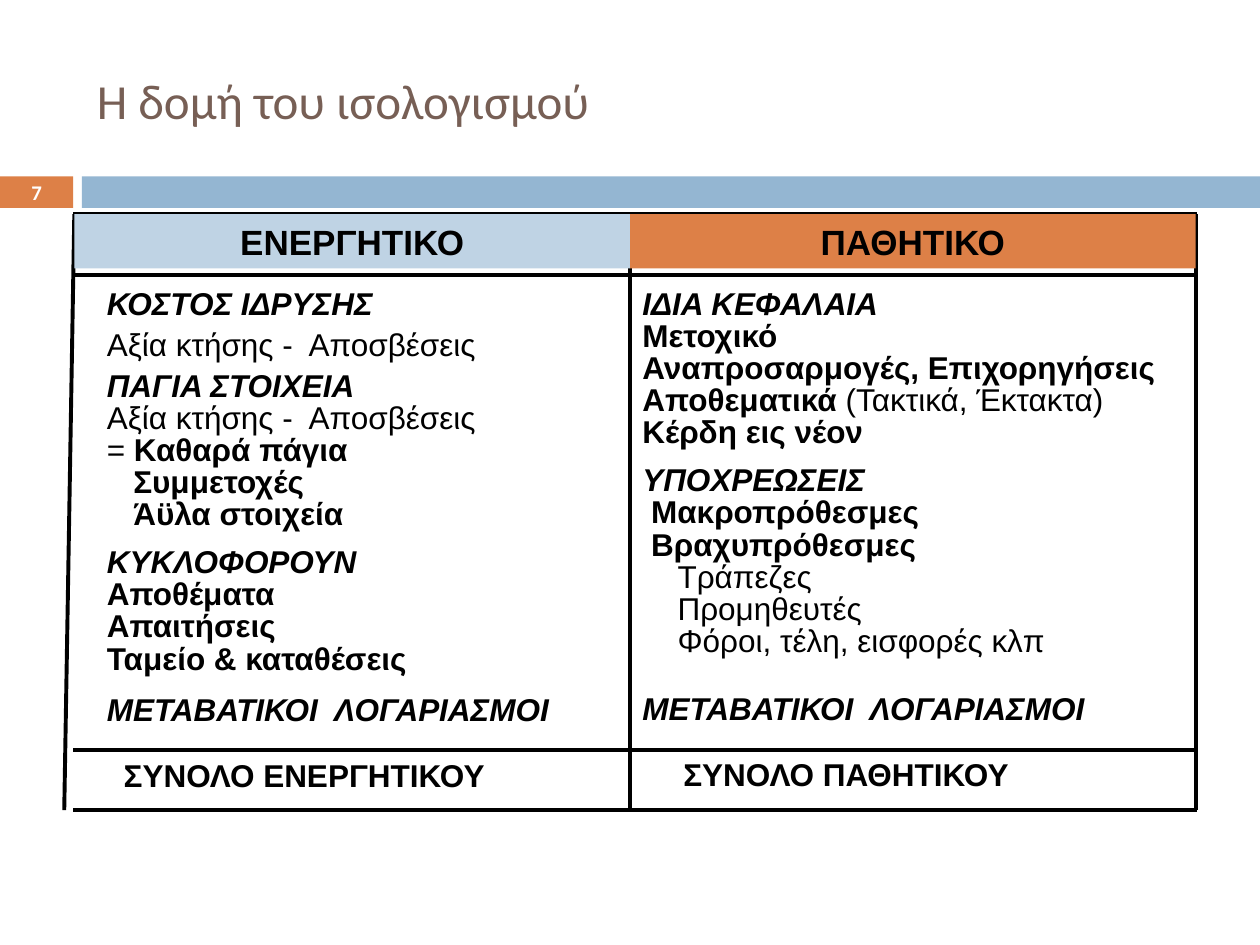
from lxml import etree
from pptx import Presentation
from pptx.dml.color import RGBColor
from pptx.enum import shapes, text
from pptx.oxml.ns import qn
from pptx.util import Inches, Pt

BLACK = RGBColor(0x00, 0x00, 0x00)
WHITE = RGBColor(0xFF, 0xFF, 0xFF)
BROWN = RGBColor(0x77, 0x5F, 0x55)
ORANGE = RGBColor(0xDD, 0x80, 0x47)
BLUE = RGBColor(0x94, 0xB6, 0xD2)
PALE_BLUE = RGBColor(0xBF, 0xD3, 0xE4)

# Ledger rows: (space before in pt, indent in inches, runs of (text, style));
# style letters: b = bold, i = italic
ASSETS = [
    (0, 0, [("ΚΟΣΤΟΣ ΙΔΡΥΣΗΣ", "bi")]),
    (5, 0, [("Αξία κτήσης -  Αποσβέσεις", "")]),
    (5, 0, [("ΠΑΓΙΑ ΣΤΟΙΧΕΙΑ", "bi")]),
    (0, 0, [("Αξία κτήσης -  Αποσβέσεις", "")]),
    (0, 0, [("= ", ""), ("Καθαρά πάγια", "b")]),
    (0, 0.21, [("Συμμετοχές", "b")]),
    (0, 0.21, [("Άϋλα στοιχεία", "b")]),
    (9, 0, [("ΚΥΚΛΟΦΟΡΟΥΝ", "bi")]),
    (0, 0, [("Αποθέματα", "b")]),
    (0, 0, [("Απαιτήσεις", "b")]),
    (0, 0, [("Ταμείο & καταθέσεις", "b")]),
    (10.8, 0, [("ΜΕΤΑΒΑΤΙΚΟΙ  ΛΟΓΑΡΙΑΣΜΟΙ", "bi")]),
]
LIABILITIES = [
    (0, 0, [("ΙΔΙΑ ΚΕΦΑΛΑΙΑ", "bi")]),
    (0, 0, [("Μετοχικό", "b")]),
    (0, 0, [("Αναπροσαρμογές, Επιχορηγήσεις", "b")]),
    (0, 0, [("Αποθεματικά ", "b"), ("(Τακτικά, Έκτακτα)", "")]),
    (0, 0, [("Κέρδη εις νέον", "b")]),
    (9, 0, [("ΥΠΟΧΡΕΩΣΕΙΣ", "bi")]),
    (0, 0.07, [("Μακροπρόθεσμες", "b")]),
    (0, 0.07, [("Βραχυπρόθεσμες", "b")]),
    (0, 0.28, [("Τράπεζες", "")]),
    (0, 0.28, [("Προμηθευτές", "")]),
    (0, 0.28, [("Φόροι, τέλη, εισφορές κλπ", "")]),
    (20.6, 0, [("ΜΕΤΑΒΑΤΙΚΟΙ  ΛΟΓΑΡΙΑΣΜΟΙ", "bi")]),
]


def style_font(font, size, color=BLACK, bold=False, italic=False, name="Arial"):
    font.name, font.size = name, Pt(size)
    font.bold, font.italic = bold, italic
    font.color.rgb = color


def add_box(slide, box, fill=None):
    """A filled rectangle, or a plain text box when there is no fill."""
    place = [Inches(v) for v in box]
    if fill is None:
        shape = slide.shapes.add_textbox(*place)
    else:
        shape = slide.shapes.add_shape(shapes.MSO_SHAPE.RECTANGLE, *place)
        shape.shadow.inherit = False
        shape.fill.solid()
        shape.fill.fore_color.rgb = fill
        shape.line.fill.background()
    shape.text_frame.word_wrap = True
    return shape


def add_label(slide, box, words, size, fill=None, color=BLACK, bold=True,
              name="Arial", align=text.PP_ALIGN.CENTER,
              anchor=text.MSO_ANCHOR.MIDDLE):
    frame = add_box(slide, box, fill).text_frame
    frame.vertical_anchor = anchor
    line = frame.paragraphs[0]
    line.text = words
    line.alignment = align
    style_font(line.runs[0].font, size, color, bold, name=name)


def add_rule(slide, x1, y1, x2, y2):
    rule = slide.shapes.add_connector(
        shapes.MSO_CONNECTOR.STRAIGHT, *[Inches(v) for v in (x1, y1, x2, y2)])
    rule.line.color.rgb = BLACK
    rule.line.width = Pt(2.25)
    etree.SubElement(rule._element.spPr, qn("a:effectLst"))


def add_ledger(slide, box, rows):
    frame = add_box(slide, box).text_frame
    for index, (space, indent, runs) in enumerate(rows):
        line = frame.add_paragraph() if index else frame.paragraphs[0]
        line.line_spacing = 0.85
        line.space_before = Pt(space)
        if indent:
            line._p.get_or_add_pPr().set("marL", str(Inches(indent)))
        for words, style in runs:
            run = line.add_run()
            run.text = words
            style_font(run.font, 18, bold="b" in style, italic="i" in style)


def add_header(slide, left, top, width, height):
    """Title above a band that starts with the slide number."""
    band_h, badge_w, band_left = 0.25, 0.58, 0.65
    band_top = top + height - band_h
    add_label(slide, (left + 0.67, top + 0.25, 8.92, 1.08),
              "Η δομή του ισολογισμού", 28, color=BROWN, bold=False,
              name="Calibri", align=text.PP_ALIGN.LEFT)
    add_label(slide, (left, band_top, badge_w, band_h), "7", 11.9, ORANGE,
              WHITE, name="Calibri")
    add_box(slide, (left + band_left, band_top, width - band_left, band_h), BLUE)


def add_balance_sheet(slide, left, top, width, height):
    """Two-sided account: headings, entries and totals between rules."""
    right, bottom, middle = left + width, top + height, 5
    total_top, side_right, head_h = bottom - 0.48, right - 0.01, 0.43

    # Rules of the account
    for y in (top, top + 0.48, total_top, bottom):
        add_rule(slide, left, y, right, y)
    add_rule(slide, left + 0.01, top, left - 0.07, bottom)
    add_rule(slide, middle, top + 0.4, middle, bottom)
    add_rule(slide, side_right, top, side_right, bottom)

    # Headings
    add_label(slide, (left + 0.01, top, middle - left - 0.01, head_h),
              "ΕΝΕΡΓΗΤΙΚΟ", 20, PALE_BLUE)
    add_label(slide, (middle, top, side_right - middle, head_h),
              "ΠΑΘΗΤΙΚΟ", 20, ORANGE)

    # Entries
    add_ledger(slide, (left + 0.17, top + 0.55, 3.86, 3.9), ASSETS)
    add_ledger(slide, (middle, top + 0.55, 4.33, 3.9), LIABILITIES)

    # Totals
    add_label(slide, (left, total_top, 3.67, 0.4), "ΣΥΝΟΛΟ ΕΝΕΡΓΗΤΙΚΟΥ", 18,
              anchor=text.MSO_ANCHOR.TOP)
    add_label(slide, (middle + 0.05, total_top - 0.01, 3.33, 0.4),
              "ΣΥΝΟΛΟ ΠΑΘΗΤΙΚΟΥ", 18, anchor=text.MSO_ANCHOR.TOP)


def main():
    deck = Presentation()
    deck.slide_width, deck.slide_height = Inches(10), Inches(7.5)
    slide = deck.slides.add_slide(deck.slide_layouts[6])
    add_header(slide, 0, 0, 10, 1.65)
    add_balance_sheet(slide, 0.58, 1.7, 8.92, 4.73)
    deck.save("out.pptx")


if __name__ == "__main__":
    main()
